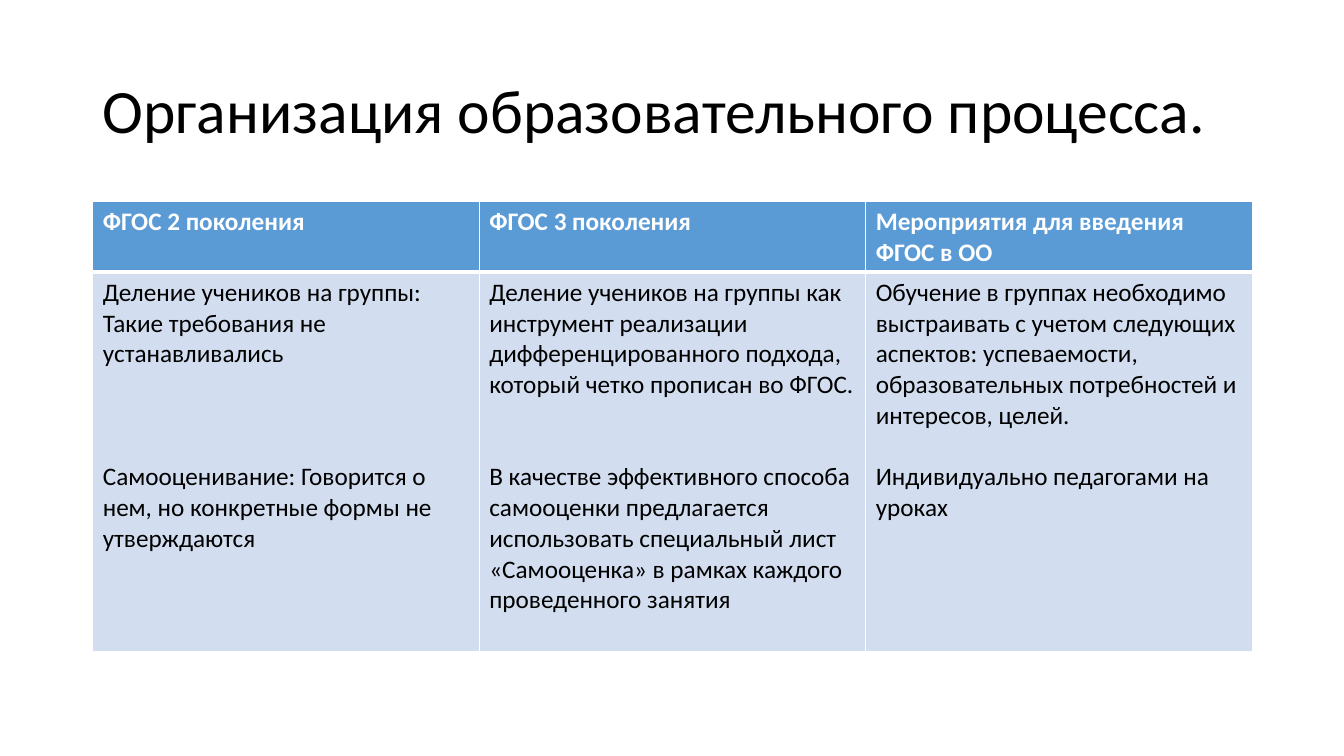
from lxml.etree import SubElement
from pptx import Presentation
from pptx.dml.color import RGBColor
from pptx.enum.text import MSO_ANCHOR
from pptx.oxml.ns import qn
from pptx.util import Inches, Pt

COLORS = {"header": "5B9BD5", "body": "D2DEEF", "white": "FFFFFF", "black": "000000"}
FONT = "Calibri"
TEXT_SIZE = 18
LINE_POINTS = 22
THIN, THICK = 1, 3
LEFT, WIDTH = 0.92, 11.5
TITLE_TOP, TITLE_HEIGHT = 0.4, 1.45
TABLE_TOP = 2
ROW_HEIGHTS = (0.7, 3.76)
TITLE = "Организация образовательного процесса."
COLUMNS = [
    ("ФГОС 2 поколения",
     "Деление учеников на группы: Такие требования не устанавливались",
     3,
     "Самооценивание: Говорится о нем, но конкретные формы не утверждаются"),
    ("ФГОС 3 поколения",
     "Деление учеников на группы как инструмент реализации дифференцированного "
     "подхода, который четко прописан во ФГОС.",
     2,
     "В качестве эффективного способа самооценки предлагается использовать "
     "специальный лист «Самооценка» в рамках каждого проведенного занятия"),
    ("Мероприятия для введения ФГОС в ОО",
     "Обучение в группах необходимо выстраивать с учетом следующих аспектов: "
     "успеваемости, образовательных потребностей и интересов, целей.",
     1,
     "Индивидуально педагогами на уроках"),
]


def write(para, text, size=TEXT_SIZE, color="black", bold=False, lines_before=0):
    """Write formatted text into a paragraph, some lines below the one before."""
    para.space_before = Pt(lines_before * LINE_POINTS)
    span = para.add_run()
    span.text = text
    span.font.name = FONT
    span.font.size = Pt(size)
    span.font.bold = bold
    span.font.color.rgb = RGBColor.from_string(COLORS[color])


def add_title(page):
    """Add the slide title."""
    box = page.shapes.add_textbox(
        Inches(LEFT), Inches(TITLE_TOP), Inches(WIDTH), Inches(TITLE_HEIGHT))
    frame = box.text_frame
    frame.word_wrap = True
    frame.vertical_anchor = MSO_ANCHOR.MIDDLE
    para = frame.paragraphs[0]
    para.line_spacing = 0.9
    write(para, TITLE, size=44)


def style_cell(cell, fill, top=THIN, bottom=THIN):
    """Give a cell white borders and a solid fill."""
    properties = cell._tc.get_or_add_tcPr()
    borders = {"a:lnL": THIN, "a:lnR": THIN, "a:lnT": top, "a:lnB": bottom}
    for side, width in borders.items():
        line = SubElement(properties, qn(side), w=str(Pt(width)))
        solid = SubElement(line, qn("a:solidFill"))
        SubElement(solid, qn("a:srgbClr"), val=COLORS["white"])
    cell.fill.solid()
    cell.fill.fore_color.rgb = RGBColor.from_string(COLORS[fill])


def add_comparison(page):
    """Add the table that compares the two generations of the standard."""
    table = page.shapes.add_table(
        len(ROW_HEIGHTS), len(COLUMNS), Inches(LEFT), Inches(TABLE_TOP),
        Inches(WIDTH), Inches(sum(ROW_HEIGHTS))).table
    for row, height in zip(table.rows, ROW_HEIGHTS):
        row.height = Inches(height)
    for index, (heading, grouping, gap, assessment) in enumerate(COLUMNS):
        header, body = table.cell(0, index), table.cell(1, index)
        style_cell(header, "header", bottom=THICK)
        style_cell(body, "body", top=THICK)
        write(header.text_frame.paragraphs[0], heading, color="white", bold=True)
        write(body.text_frame.paragraphs[0], grouping)
        write(body.text_frame.add_paragraph(), assessment, lines_before=gap)


def main():
    """Build the slide and save it."""
    deck = Presentation()
    deck.slide_width, deck.slide_height = Inches(13.33), Inches(7.5)
    page = deck.slides.add_slide(deck.slide_layouts[6])
    add_title(page)
    add_comparison(page)
    deck.save("out.pptx")


if __name__ == "__main__":
    main()
